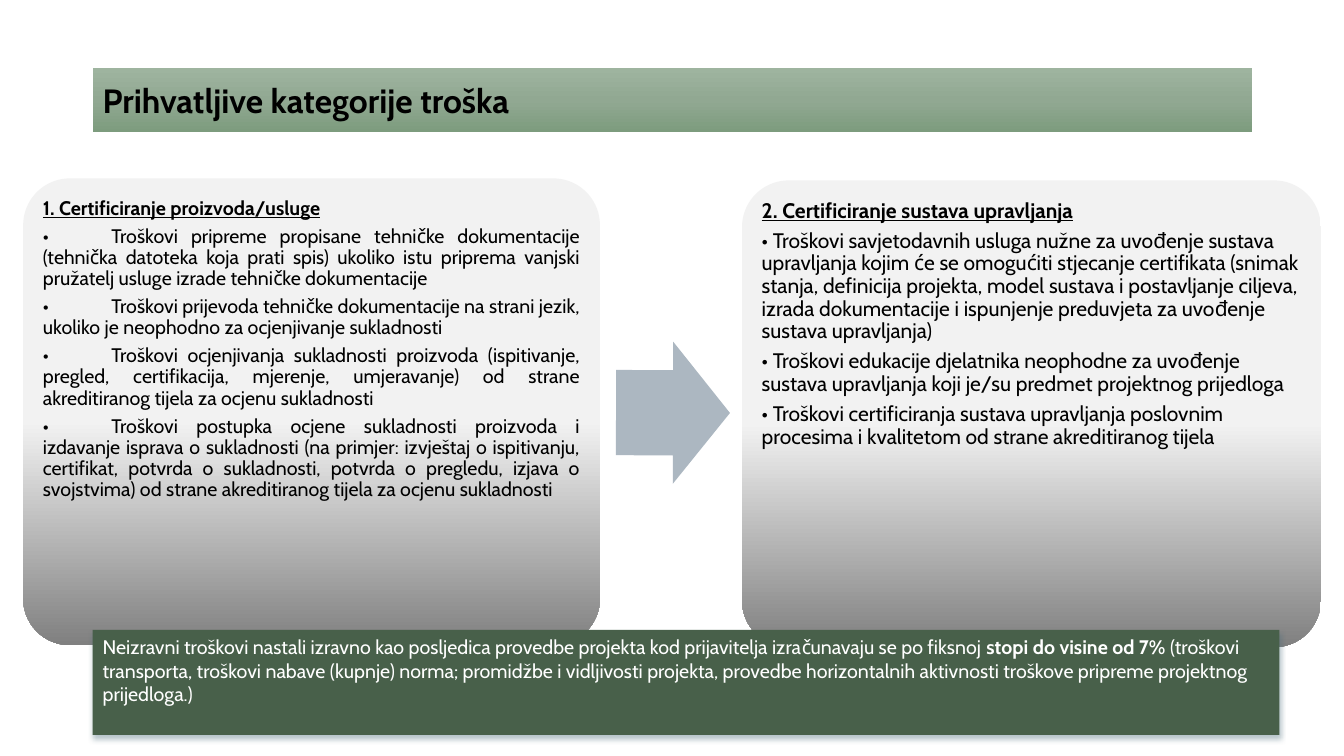
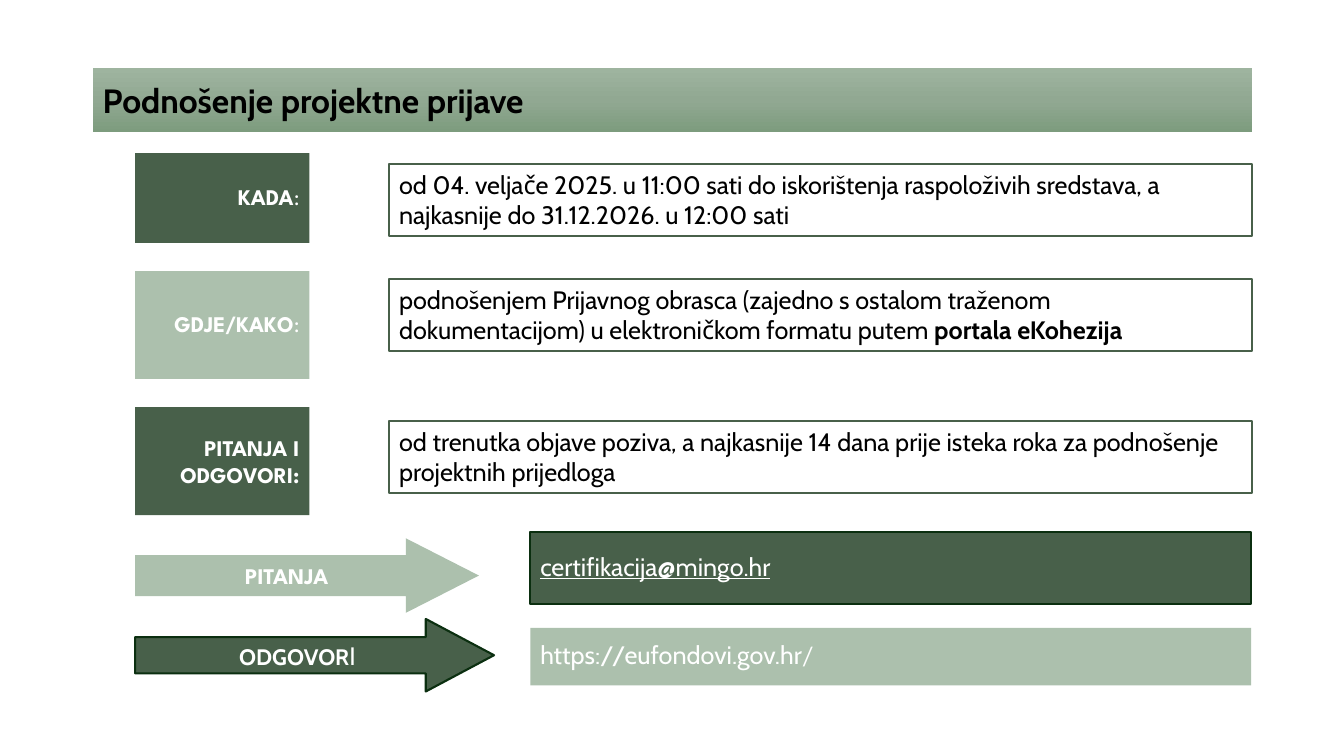
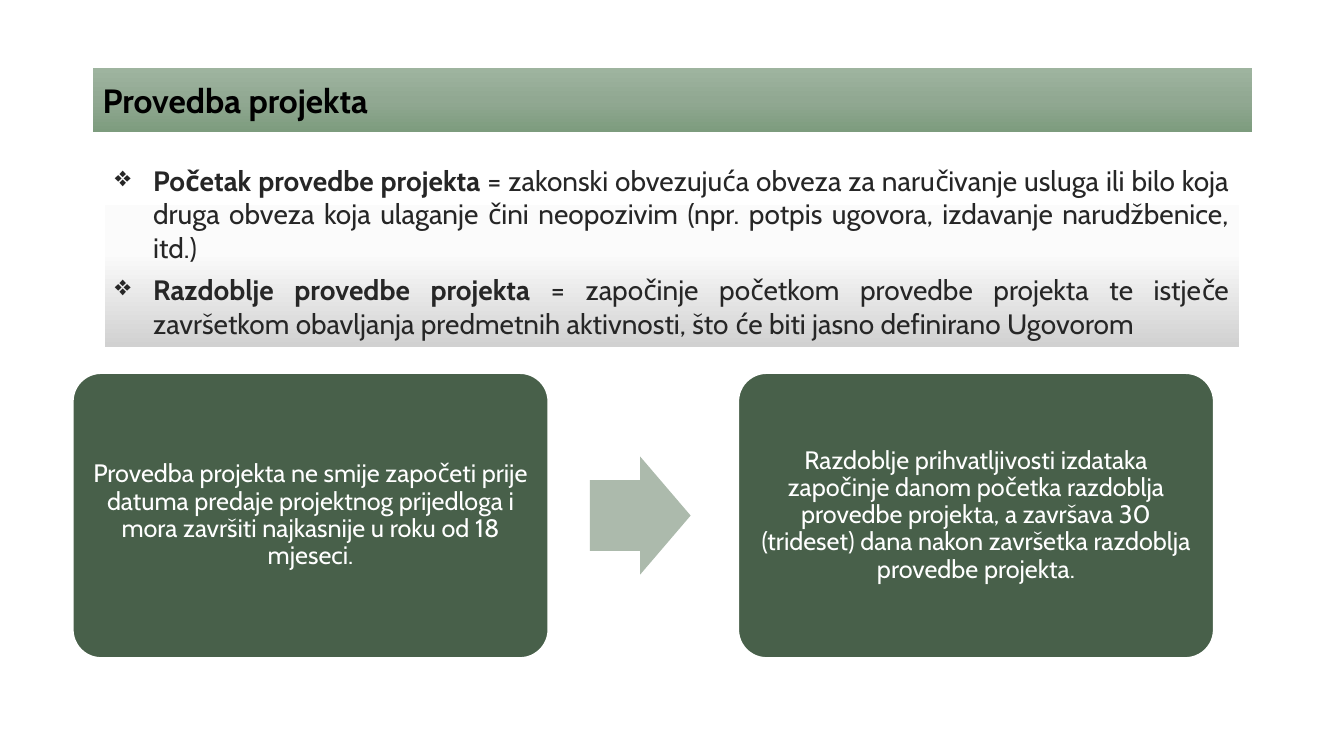
import dataclasses

import pptx
import pptx.dml.color
import pptx.enum.shapes
import pptx.enum.text
import pptx.oxml.ns
import pptx.util
from lxml import etree

Inches = pptx.util.Inches
Pt = pptx.util.Pt
qn = pptx.oxml.ns.qn
SHAPE = pptx.enum.shapes.MSO_SHAPE
ALIGN = pptx.enum.text.PP_ALIGN
ANCHOR = pptx.enum.text.MSO_ANCHOR


@dataclasses.dataclass(frozen=True)
class Theme:
    body_font: str = "Cabin"
    label_font: str = "League Spartan"
    black: str = "000000"
    white: str = "FFFFFF"
    charcoal: str = "262626"
    dark_green: str = "48604A"
    light_green: str = "ACC0AD"
    arrow_green: str = "ACBAAC"
    outline_green: str = "0B2F10"
    arrow_gray: str = "ACB7C1"
    shadow: str = "496C7B"
    title_gradient: tuple = ((0, "9EB49F"), (50, "91A892"), (100, "7D9C7E"))
    card_gradient: tuple = ((52, "F2F2F2"), (100, "808080"))
    panel_gradient: tuple = ((0, "FFFFFF"), (50, "FBFBFB"), (100, "D1D1D1"))
    title_size: int = 24
    definition_size: int = 20
    text_size: int = 18
    label_size: int = 16
    wide_card_size: int = 15
    small_size: int = 14
    outline_width: float = 1.5


THEME = Theme()


def color(value):
    return pptx.dml.color.RGBColor.from_string(value)


def fill_gradient(shape, stops):
    shape.fill.gradient()
    shape.fill.gradient_angle = 270
    stop_list = shape._element.spPr.find(qn("a:gradFill")).find(qn("a:gsLst"))
    for stop in list(stop_list):
        stop_list.remove(stop)
    for position, value in stops:
        stop = etree.SubElement(stop_list, qn("a:gs"), pos=str(position * 1000))
        etree.SubElement(stop, qn("a:srgbClr"), val=value)


def add_shape(slide, kind, box, fill, line=None, adjustments=()):
    shape = slide.shapes.add_shape(kind, *map(Inches, box))
    shape.shadow.inherit = False
    for index, value in enumerate(adjustments):
        shape.adjustments[index] = value
    if isinstance(fill, tuple):
        fill_gradient(shape, fill)
    else:
        shape.fill.solid()
        shape.fill.fore_color.rgb = color(fill)
    if line:
        shape.line.color.rgb = color(line)
        shape.line.width = Pt(THEME.outline_width)
    else:
        shape.line.fill.background()
    return shape


def add_shadow(shape):
    effects = shape._element.spPr.find(qn("a:effectLst"))
    shadow = etree.SubElement(
        effects, qn("a:outerShdw"), blurRad=str(Pt(4)), dist=str(Pt(3)),
        dir="5400000", rotWithShape="0")
    shade = etree.SubElement(shadow, qn("a:srgbClr"), val=THEME.shadow)
    etree.SubElement(shade, qn("a:alpha"), val="40000")


def add_run(paragraph, text, size, ink, font=THEME.body_font, bold=False, underline=False):
    run = paragraph.add_run()
    run.text = text
    run.font.size = Pt(size)
    run.font.name = font
    run.font.bold = bold
    run.font.underline = underline
    run.font.color.rgb = color(ink)


def write(shape, paragraphs, size, ink, align=ALIGN.LEFT, anchor=ANCHOR.MIDDLE,
          spacing=1.0, after=0, inset=None):
    frame = shape.text_frame
    frame.word_wrap = True
    frame.vertical_anchor = anchor
    if inset is not None:
        frame.margin_left = frame.margin_right = Inches(inset)
        frame.margin_top = frame.margin_bottom = Inches(inset)
    for index, runs in enumerate(paragraphs):
        paragraph = frame.add_paragraph() if index else frame.paragraphs[0]
        paragraph.alignment = align
        paragraph.line_spacing = spacing
        paragraph.space_after = Pt(after)
        for text, style in runs:
            add_run(paragraph, text, **{"size": size, "ink": ink, **style})
    return frame.paragraphs


def set_tab(paragraph, position):
    tabs = etree.SubElement(paragraph._p.get_or_add_pPr(), qn("a:tabLst"))
    etree.SubElement(tabs, qn("a:tab"), pos=str(Inches(position)), algn="l")


def set_bullet(paragraph, character, indent):
    properties = paragraph._p.get_or_add_pPr()
    properties.set("marL", str(Inches(indent)))
    properties.set("indent", str(-Inches(indent)))
    etree.SubElement(properties, qn("a:buChar"), char=character)


def add_titled_slide(presentation, title):
    slide = presentation.slides.add_slide(presentation.slide_layouts[6])
    band = add_shape(slide, SHAPE.RECTANGLE, (0.92, 0.68, 11.5, 0.63), THEME.title_gradient)
    write(band, [[(title, {"bold": True})]], THEME.title_size, THEME.black)
    return slide


def add_cost_card(slide, box, heading, items, separator, size, align):
    card = add_shape(slide, SHAPE.ROUNDED_RECTANGLE, box, THEME.card_gradient, adjustments=[0.1])
    paragraphs = [[(heading, {"bold": True, "underline": True})]]
    paragraphs += [[("•" + separator + item, {})] for item in items]
    return write(card, paragraphs, size, THEME.black, align, ANCHOR.TOP,
                 spacing=0.9, after=round(size * 0.35, 1), inset=0.06)


def add_period_card(slide, left, text):
    card = add_shape(slide, SHAPE.ROUNDED_RECTANGLE, (left, 3.7, 4.72, 2.83),
                     THEME.dark_green, THEME.white, [0.1])
    write(card, [[(text, {})]], THEME.text_size, THEME.white, ALIGN.CENTER,
          spacing=0.9, inset=0.07)


def build_costs(presentation):
    slide = add_titled_slide(presentation, "Prihvatljive kategorije troška")
    product_items = [
        "Troškovi pripreme propisane tehničke dokumentacije (tehnička datoteka koja prati spis) ukoliko istu priprema vanjski pružatelj usluge izrade tehničke dokumentacije",
        "Troškovi prijevoda tehničke dokumentacije na strani jezik, ukoliko je neophodno za ocjenjivanje sukladnosti",
        "Troškovi ocjenjivanja sukladnosti proizvoda (ispitivanje, pregled, certifikacija, mjerenje, umjeravanje) od strane akreditiranog tijela za ocjenu sukladnosti",
        "Troškovi postupka ocjene sukladnosti proizvoda i izdavanje isprava o sukladnosti (na primjer: izvještaj o ispitivanju, certifikat, potvrda o sukladnosti, potvrda o pregledu, izjava o svojstvima) od strane akreditiranog tijela za ocjenu sukladnosti",
    ]
    system_items = [
        "Troškovi savjetodavnih usluga nužne za uvođenje sustava upravljanja kojim će se omogućiti stjecanje certifikata (snimak stanja, definicija projekta, model sustava i postavljanje ciljeva, izrada dokumentacije i ispunjenje preduvjeta za uvođenje sustava upravljanja)",
        "Troškovi edukacije djelatnika neophodne za uvođenje sustava upravljanja koji je/su predmet projektnog prijedloga",
        "Troškovi certificiranja sustava upravljanja poslovnim procesima i kvalitetom od strane akreditiranog tijela",
    ]
    paragraphs = add_cost_card(
        slide, (0.23, 1.77, 5.72, 4.63), "1. Certificiranje proizvoda/usluge",
        product_items, "\t", THEME.small_size, ALIGN.JUSTIFY)
    for paragraph in paragraphs[1:]:
        set_tab(paragraph, 0.68)
    arrow = add_shape(slide, SHAPE.RIGHT_ARROW, (6.11, 3.39, 1.13, 1.41),
                      THEME.arrow_gray, adjustments=[0.6, 0.5])
    arrow.rotation = 0.2
    add_cost_card(
        slide, (7.36, 1.79, 5.74, 4.63), "2. Certificiranje sustava upravljanja",
        system_items, " ", THEME.wide_card_size, ALIGN.LEFT)
    strip = add_shape(slide, SHAPE.RECTANGLE, (0.92, 6.25, 11.77, 1.04), THEME.dark_green)
    add_shadow(strip)
    write(strip, [[
        ("Neizravni troškovi nastali izravno kao posljedica provedbe projekta kod prijavitelja izračunavaju se po fiksnoj ", {}),
        ("stopi do visine od 7% ", {"bold": True}),
        ("(troškovi transporta, troškovi nabave (kupnje) norma; promidžbe i vidljivosti projekta, provedbe horizontalnih aktivnosti troškove pripreme projektnog prijedloga.)", {}),
    ]], THEME.small_size, THEME.white, anchor=ANCHOR.TOP)


def build_submission(presentation):
    slide = add_titled_slide(presentation, "Podnošenje projektne prijave")
    label_style = {"font": THEME.label_font, "bold": True}
    colon = (":", {"font": THEME.label_font})
    rows = [
        (0.89, THEME.dark_green, 0.9, [("KADA", label_style), colon], 1.63,
         [("od 04. veljače 2025. u 11:00 sati do iskorištenja raspoloživih sredstava, a najkasnije do 31.12.2026. u 12:00 sati", {})]),
        (1.07, THEME.light_green, 0.9, [("GDJE/KAKO", label_style), colon], 2.77,
         [("podnošenjem Prijavnog obrasca (zajedno s ostalom traženom dokumentacijom) u elektroničkom formatu putem ", {}),
          ("portala eKohezija", {"bold": True})]),
        (1.07, THEME.dark_green, 1.0, [("PITANJA I ODGOVORI:", label_style)], 4.18,
         [("od trenutka objave poziva, a najkasnije 14 dana prije isteka roka za podnošenje projektnih prijedloga", {})]),
    ]
    top = 1.52
    for height, fill, spacing, label, answer_top, answer in rows:
        tile = add_shape(slide, SHAPE.RECTANGLE, (1.34, top, 1.73, height), fill)
        write(tile, [label], THEME.label_size, THEME.white, ALIGN.RIGHT, spacing=spacing)
        field = add_shape(slide, SHAPE.RECTANGLE, (3.86, answer_top, 8.56, 0.71),
                          THEME.white, THEME.dark_green)
        write(field, [answer], THEME.text_size, THEME.black, anchor=ANCHOR.TOP)
        top += height + 0.28

    contacts = [
        ((1.34, 5.34, 3.41, 0.74), [0.55, 0.98], THEME.light_green, None,
         [("PITANJA", label_style)],
         (5.26, 5.28, 7.15, 0.71), THEME.dark_green, THEME.outline_green,
         [("certifikacija@mingo.hr", {"underline": True})]),
        ((1.34, 6.14, 3.56, 0.72), [0.5, 0.94], THEME.dark_green, THEME.outline_green,
         [("ODGOVOR", {"bold": True}), ("I", {"size": THEME.text_size})],
         (5.26, 6.23, 7.15, 0.57), THEME.light_green, None,
         [("https://eufondovi.gov.hr", {}), ("/", {"font": THEME.label_font})]),
    ]
    for (arrow_box, adjustments, arrow_fill, arrow_line, label,
         address_box, address_fill, address_line, address) in contacts:
        arrow = add_shape(slide, SHAPE.RIGHT_ARROW, arrow_box, arrow_fill, arrow_line, adjustments)
        write(arrow, [label], THEME.label_size, THEME.white, ALIGN.CENTER)
        bar = add_shape(slide, SHAPE.RECTANGLE, address_box, address_fill, address_line)
        write(bar, [address], THEME.text_size, THEME.white, spacing=0.9)


def build_implementation(presentation):
    slide = add_titled_slide(presentation, "Provedba projekta")
    panel = add_shape(slide, SHAPE.RECTANGLE, (1.04, 1.57, 11.25, 1.87), THEME.panel_gradient)
    definitions = [
        ("Početak provedbe projekta ",
         "= zakonski obvezujuća obveza za naručivanje usluga ili bilo koja druga obveza koja ulaganje čini neopozivim (npr. potpis ugovora, izdavanje narudžbenice, itd.)"),
        ("Razdoblje provedbe projekta ",
         "= započinje početkom provedbe projekta te istječe završetkom obavljanja predmetnih aktivnosti, što će biti jasno definirano Ugovorom"),
    ]
    paragraphs = write(
        panel, [[(term, {"bold": True}), (meaning, {})] for term, meaning in definitions],
        THEME.definition_size, THEME.charcoal, ALIGN.JUSTIFY, ANCHOR.TOP, after=6)
    for paragraph in paragraphs:
        set_bullet(paragraph, "❖", 0.38)
    add_period_card(slide, 0.72, "Provedba projekta ne smije započeti prije datuma predaje projektnog prijedloga i mora završiti najkasnije u roku od 18 mjeseci.")
    add_shape(slide, SHAPE.RIGHT_ARROW, (5.85, 4.53, 1, 1.17), THEME.arrow_green,
              adjustments=[0.6, 0.5])
    add_period_card(slide, 7.32, "Razdoblje prihvatljivosti izdataka započinje danom početka razdoblja provedbe projekta, a završava 30 (trideset) dana nakon završetka razdoblja provedbe projekta.")


def main():
    presentation = pptx.Presentation()
    presentation.slide_width = Inches(13.33)
    presentation.slide_height = Inches(7.5)
    build_costs(presentation)
    build_submission(presentation)
    build_implementation(presentation)
    presentation.save("out.pptx")


if __name__ == "__main__":
    main()
